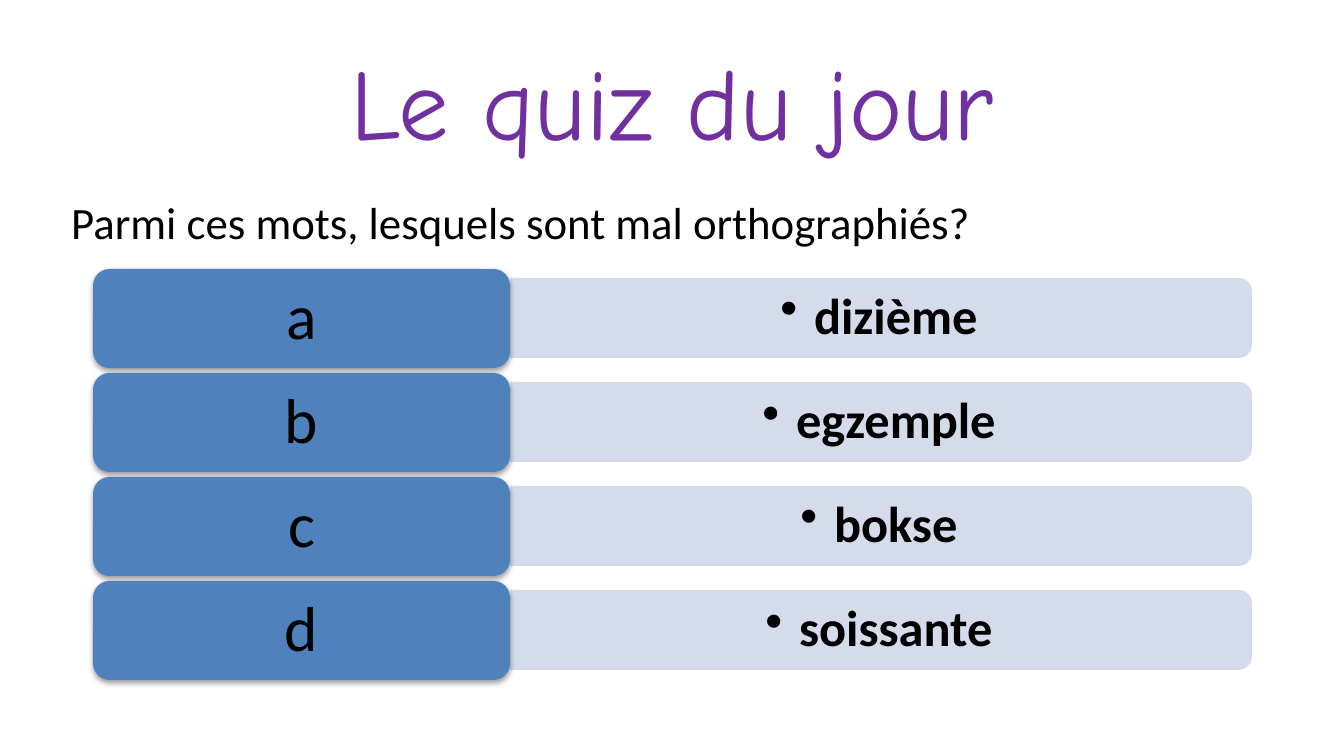
import pptx
import pptx.util
import pptx.oxml
import pptx.oxml.ns
import pptx.dml.color
import pptx.enum.shapes
import pptx.enum.text

PX = 914400 / 134.4
THEME = {
    "title": ("Comic Neue", 54, "7030A0"),
    "ask": ("Calibri", 24, "000000"),
    "key": ("Calibri", 34, "000000"),
    "word": ("Calibri", 27, "000000"),
    "tag": "4F81BD",
    "bar": "D0D8E8",
}
NS = pptx.oxml.ns.nsdecls("a")
SHADE = (f'<a:outerShdw {NS} blurRad="40000" dist="20000" dir="5400000" rotWithShape="0">'
         '<a:srgbClr val="000000"><a:alpha val="38000"/></a:srgbClr></a:outerShdw>')
KIND = pptx.enum.shapes.MSO_SHAPE
ALIGN = pptx.enum.text.PP_ALIGN
color = pptx.dml.color.RGBColor.from_string


def block(kind, box, fill):
    shape = slide.shapes.add_shape(kind, *[round(n * PX) for n in box])
    shape.shadow.inherit = False
    shape.fill.solid()
    shape.fill.fore_color.rgb = color(THEME[fill])
    shape.line.fill.background()
    return shape


def write(shape, text, style, align=ALIGN.CENTER, wrap=True):
    """Put one styled paragraph in the shape and return it."""
    frame = shape.text_frame
    frame.word_wrap = wrap
    frame.vertical_anchor = pptx.enum.text.MSO_ANCHOR.MIDDLE
    para = frame.paragraphs[0]
    para.text = text
    para.alignment = align
    name, size, ink = THEME[style]
    para.font.name = name
    para.font.size = pptx.util.Pt(size)
    para.font.color.rgb = color(ink)
    return para


deck = pptx.Presentation()
deck.slide_width = round(1344 * PX)
deck.slide_height = round(756 * PX)
slide = deck.slides.add_slide(deck.slide_layouts[6])

title = slide.shapes.add_textbox(*[round(n * PX) for n in (93, 27, 1158, 146)])
write(title, "Le quiz du jour", "title")

# Each row: a pale bar turned on its side, its word, and a lettered tag
LEFT, TOP, STEP = 93, 269, 104
TAG_W, TAG_H = 417, 99
BAR_W, BAR_H = 742, 80
edge = LEFT + TAG_W
words = {"a": "dizième", "b": "egzemple", "c": "bokse", "d": "soissante"}

for i, (key, word) in enumerate(words.items()):
    top = TOP + i * STEP
    mid = top + TAG_H // 2
    bar = block(KIND.ROUND_2_SAME_RECTANGLE,
                (edge + (BAR_W - BAR_H) // 2, mid - BAR_W // 2, BAR_H, BAR_W), "bar")
    bar.rotation = 90
    tint = bar.fill._xPr.find(".//" + pptx.oxml.ns.qn("a:srgbClr"))
    tint.append(pptx.oxml.parse_xml(f'<a:alpha {NS} val="90000"/>'))

    label = slide.shapes.add_textbox(
        *[round(n * PX) for n in (edge, mid - 36, BAR_W - 4, 72)])
    para = write(label, word, "word")
    para.font.bold = True
    para.line_spacing = 0.9
    props = para._p.get_or_add_pPr()
    props.set("marL", "228600")
    props.set("indent", "-228600")
    bullet = pptx.oxml.parse_xml(f'<a:buChar {NS} char="•"/>')
    props.find(pptx.oxml.ns.qn("a:defRPr")).addprevious(bullet)

    tag = block(KIND.ROUNDED_RECTANGLE, (LEFT, top, TAG_W, TAG_H), "tag")
    tag._element.spPr.find(pptx.oxml.ns.qn("a:effectLst")).append(
        pptx.oxml.parse_xml(SHADE))
    write(tag, key, "key").line_spacing = 0.9

ask = slide.shapes.add_textbox(*[round(n * PX) for n in (58, 188, 934, 68)])
write(ask, "Parmi ces mots, lesquels sont mal orthographiés?", "ask",
      ALIGN.LEFT, False)

deck.save("out.pptx")
